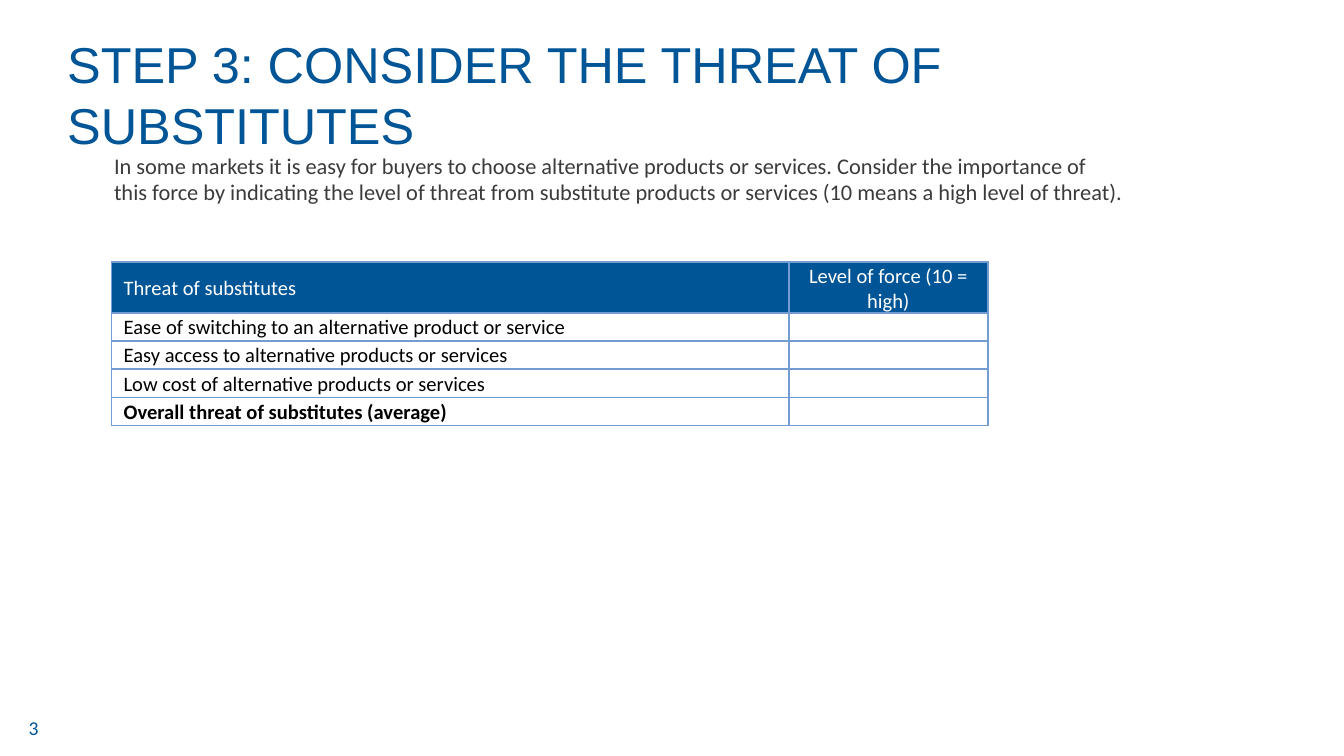
"""Build the slide on the threat of substitutes, with its scoring table."""
from lxml.etree import SubElement
from pptx import Presentation
from pptx.dml.color import RGBColor
from pptx.enum.text import MSO_ANCHOR, MSO_AUTO_SIZE, PP_ALIGN
from pptx.oxml.ns import qn
from pptx.util import Inches, Pt

COLORS = {"blue": "005596", "text": "3B3B3B", "border": "739DD2",
          "white": "FFFFFF", "black": "000000"}
COLS = [5.04, 1.48]
ROW = 0.21
CELLS = [
    ["Threat of substitutes", "Level of force (10 = high)"],
    ["Ease of switching to an alternative product or service", ""],
    ["Easy access to alternative products or services", ""],
    ["Low cost of alternative products or services", ""],
    ["Overall threat of substitutes (average)", ""],
]


def write(tf, text, size, color, font="Calibri", align=PP_ALIGN.LEFT):
    p = tf.paragraphs[0]
    p.text = text
    p.alignment = align
    p.font.size = Pt(size)
    p.font.name = font
    p.font.color.rgb = RGBColor.from_string(COLORS[color])
    return p


def add_borders(cell):
    tcPr = cell._tc.get_or_add_tcPr()
    for side in ("a:lnL", "a:lnR", "a:lnT", "a:lnB"):
        ln = SubElement(tcPr, qn(side), w=str(Pt(1)))
        fill = SubElement(ln, qn("a:solidFill"))
        SubElement(fill, qn("a:srgbClr"), val=COLORS["border"])


prs = Presentation()
prs.slide_width = Inches(10)
prs.slide_height = prs.slide_width * 9 // 16
s = prs.slides.add_slide(prs.slide_layouts[5])

title = s.shapes.title
title.left, title.top = Inches(0.5), Inches(0.23)
title.width, title.height = Inches(9), Inches(0.94)
tf = title.text_frame
tf.margin_left = tf.margin_right = tf.margin_top = tf.margin_bottom = 0
tf.auto_size = MSO_AUTO_SIZE.NONE
tf.vertical_anchor = MSO_ANCHOR.MIDDLE
write(tf, "STEP 3: CONSIDER THE THREAT OF SUBSTITUTES", 27, "blue", "Arial")

intro = s.shapes.add_textbox(Inches(0.75), Inches(1.08), Inches(7.72), Inches(0.5))
tf = intro.text_frame
tf.word_wrap = True
tf.auto_size = MSO_AUTO_SIZE.SHAPE_TO_FIT_TEXT
write(tf, "In some markets it is easy for buyers to choose alternative products or "
      "services. Consider the importance of this force by indicating the level of "
      "threat from substitute products or services (10 means a high level of "
      "threat).", 12, "text")

table = s.shapes.add_table(len(CELLS), len(COLS), Inches(0.83), Inches(1.95),
                           Inches(sum(COLS)), Inches(ROW * len(CELLS))).table
table.first_row = table.horz_banding = False
for col, width in zip(table.columns, COLS):
    col.width = Inches(width)
for i, row in enumerate(table.rows):
    row.height = Inches(ROW)
    for j, cell in enumerate(row.cells):
        cell.margin_left = Inches(0.01 if j else 0.09)
        cell.margin_right = cell.margin_top = Inches(0.01)
        cell.margin_bottom = 0
        cell.vertical_anchor = MSO_ANCHOR.BOTTOM if j else MSO_ANCHOR.MIDDLE
        p = write(cell.text_frame, CELLS[i][j], 11, "black" if i else "white",
                  align=PP_ALIGN.CENTER if j else PP_ALIGN.LEFT)
        p.font.bold = i == len(CELLS) - 1
        p._p.get_or_add_endParaRPr().set("sz", "1100")
        add_borders(cell)
        if i:
            cell.fill.background()
        else:
            cell.fill.solid()
            cell.fill.fore_color.rgb = RGBColor.from_string(COLORS["blue"])

number = s.shapes.add_textbox(Inches(0.1), Inches(5.33), Inches(0.3), Inches(0.15))
tf = number.text_frame
tf.margin_left = tf.margin_right = tf.margin_top = tf.margin_bottom = 0
write(tf, "3", 10.5, "blue", align=PP_ALIGN.CENTER)

prs.save("out.pptx")
